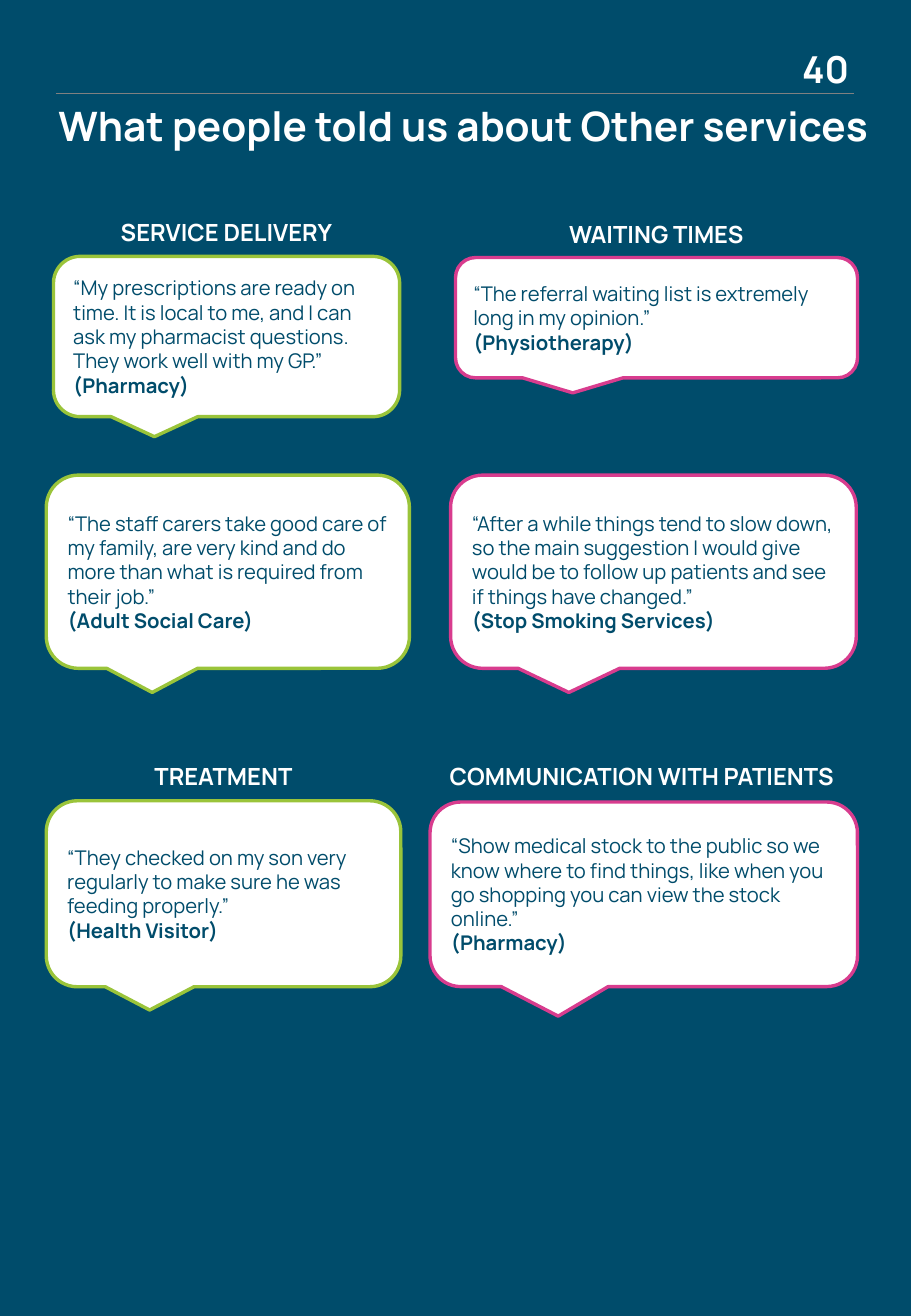
import pptx
import pptx.util
import pptx.dml.color
import pptx.enum.shapes
import pptx.enum.text
import pptx.oxml.ns
import lxml.etree

Pt = pptx.util.Pt
RGBColor = pptx.dml.color.RGBColor
ALIGN = pptx.enum.text.PP_ALIGN
ANCHOR = pptx.enum.text.MSO_ANCHOR
SHAPE = pptx.enum.shapes.MSO_SHAPE

FONT = "Manrope"
NAVY = RGBColor(0x00, 0x4C, 0x6B)
WHITE = RGBColor(0xFF, 0xFF, 0xFF)
GREEN = RGBColor(0x9A, 0xC4, 0x3A)
PINK = RGBColor(0xD8, 0x3C, 0x8E)
GREY = RGBColor(0x80, 0x80, 0x80)

# Boxes are left, top, width, height in points
HEADINGS = [
    ("SERVICE DELIVERY", (36.7, 125.3, 195.1, 24.2)),
    ("WAITING TIMES", (270, 126.7, 238.3, 24.2)),
    ("TREATMENT", (27.4, 447.8, 210.2, 24.2)),
    ("COMMUNICATION WITH PATIENTS", (254.9, 447.8, 251.3, 24.2)),
]
QUOTES = [
    (GREEN, (31.7, 151.9, 205.2, 95), "(Pharmacy)",
     "“My prescriptions are ready on time. It is local to me, and I can ask my "
     "pharmacist questions. They work well with my GP.”"),
    (PINK, (270, 152.6, 238.3, 71.3), "(Physiotherapy)",
     "“The referral waiting list is extremely long in my opinion.”"),
    (GREEN, (27.4, 281.5, 215.3, 114.5), "(Adult Social Care)",
     "“The staff carers take good care of my family, are very kind and do more "
     "than what is required from their job.”"),
    (PINK, (267.1, 281.5, 240.5, 114.5), "(Stop Smoking Services)",
     "“After a while things tend to slow down, so the main suggestion I would "
     "give would be to follow up patients and see if things have changed.”"),
    (GREEN, (27.4, 474.5, 210.2, 110.2), "(Health Visitor)",
     "“They checked on my son very regularly to make sure he was feeding properly.”"),
    (PINK, (254.9, 475.2, 253.4, 109.4), "(Pharmacy)",
     "“Show medical stock to the public so we know where to find things, like "
     "when you go shopping you can view the stock online.”"),
]
WIDE_TAIL = (-0.2, 0.66)


def write(para, text, size=12, color=NAVY, bold=False, align=ALIGN.LEFT):
    para.alignment = align
    span = para.add_run()
    span.text = text
    span.font.name = FONT
    span.font.size = Pt(size)
    span.font.bold = bold
    span.font.color.rgb = color


def add_label(page, box, text, margin=None, **text_format):
    label = page.shapes.add_textbox(*map(Pt, box))
    frame = label.text_frame
    frame.word_wrap = True
    if margin is not None:
        frame.margin_left = frame.margin_right = Pt(margin)
        frame.margin_top = frame.margin_bottom = Pt(margin)
    write(frame.paragraphs[0], text, color=WHITE, bold=True, **text_format)


def add_header(page, box):
    left, top, width, height = box
    # Rule under the page number
    rule_top = top + 28
    rule = page.shapes.add_connector(
        pptx.enum.shapes.MSO_CONNECTOR.STRAIGHT,
        Pt(left + 5.7), Pt(rule_top), Pt(left + 478.8), Pt(rule_top))
    rule.line.color.rgb = GREY
    rule.line.width = Pt(0.75)
    properties = rule._element.spPr
    lxml.etree.SubElement(properties, pptx.oxml.ns.qn("a:effectLst"))
    # Title
    title = page.shapes.title
    title.left, title.top = Pt(left), Pt(top + 28.8)
    title.width, title.height = Pt(width), Pt(height - 28.8)
    frame = title.text_frame
    frame.word_wrap = True
    frame.auto_size = pptx.enum.text.MSO_AUTO_SIZE.NONE
    frame.vertical_anchor = ANCHOR.TOP
    write(frame.paragraphs[0], "What people told us about Other services",
          size=24, color=WHITE, bold=True)
    # Page number
    add_label(page, (left + 429.8, top, 46.1, 28), "40",
              margin=0, size=22, align=ALIGN.RIGHT)


def add_quote(page, box, color, quote, service, tail=None):
    bubble = page.shapes.add_shape(SHAPE.ROUNDED_RECTANGULAR_CALLOUT, *map(Pt, box))
    bubble.shadow.inherit = False
    bubble.fill.solid()
    bubble.fill.fore_color.rgb = WHITE
    bubble.line.color.rgb = color
    bubble.line.width = Pt(2)
    if tail:
        bubble.adjustments[0], bubble.adjustments[1] = tail
    frame = bubble.text_frame
    frame.word_wrap = True
    frame.vertical_anchor = ANCHOR.MIDDLE
    write(frame.paragraphs[0], quote)
    write(frame.add_paragraph(), service, bold=True)


def build_page(deck):
    page = deck.slides.add_slide(deck.slide_layouts.get_by_name("Title Only"))
    page.background.fill.solid()
    page.background.fill.fore_color.rgb = NAVY
    add_header(page, (27.4, 27.4, 500.4, 94.3))
    # Topic headings
    for text, box in HEADINGS:
        add_label(page, box, text, size=14, align=ALIGN.CENTER)
    # Speech bubbles; the last one has a longer tail
    for color, box, service, quote in QUOTES[:-1]:
        add_quote(page, box, color, quote, service)
    color, box, service, quote = QUOTES[-1]
    add_quote(page, box, color, quote, service, tail=WIDE_TAIL)


def main():
    deck = pptx.Presentation()
    deck.slide_width, deck.slide_height = Pt(540), Pt(779.76)
    build_page(deck)
    deck.save("out.pptx")


if __name__ == "__main__":
    main()
